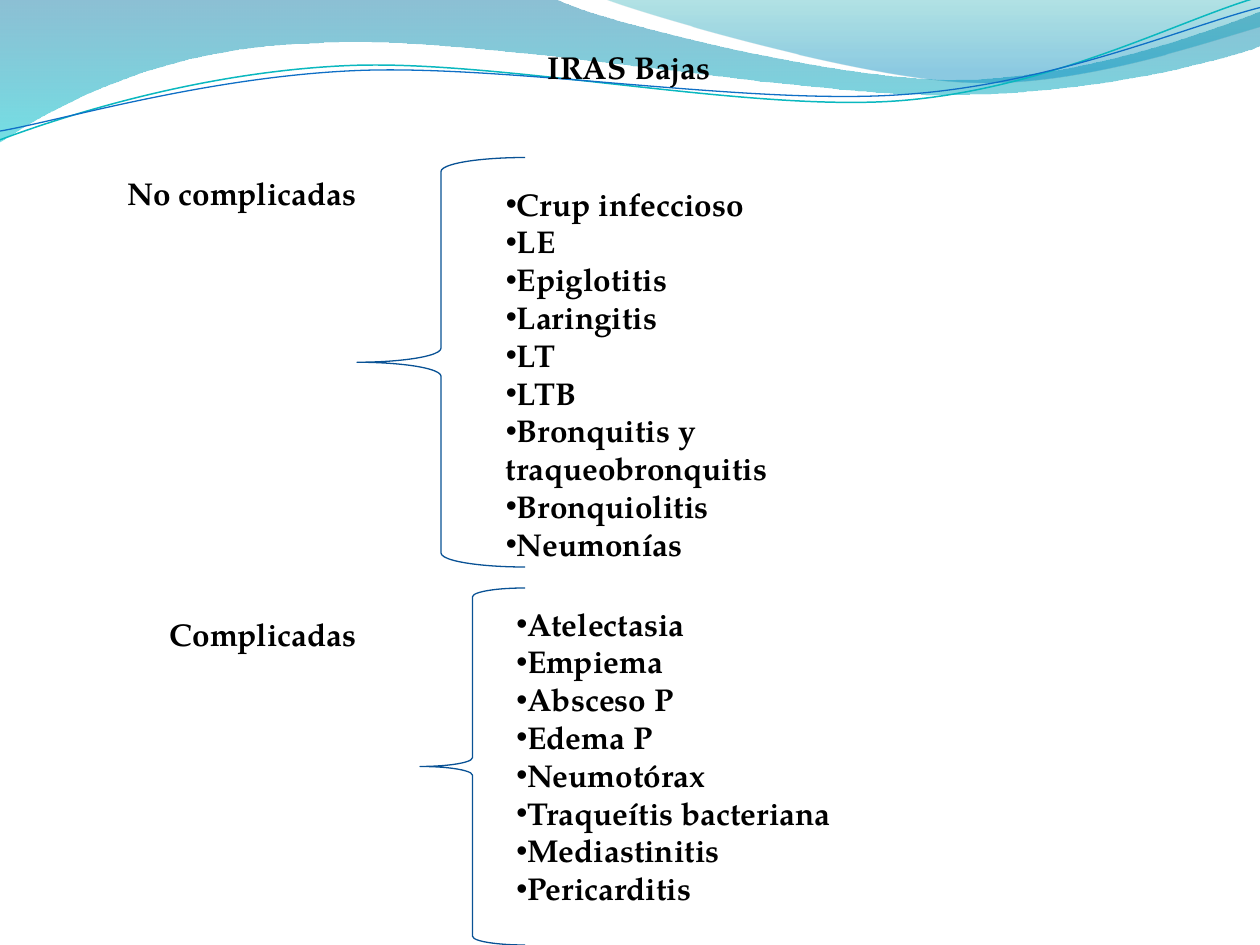
from dataclasses import dataclass
from math import cos, radians, sin

from pptx import Presentation
from pptx.dml.color import RGBColor
from pptx.enum.shapes import MSO_SHAPE
from pptx.oxml import parse_xml
from pptx.oxml.ns import nsdecls, qn
from pptx.util import Inches, Pt


@dataclass(frozen=True)
class Theme:
    font: str = "TeX Gyre Pagella"
    text_size: float = 18
    text: str = "000000"
    brace: str = "095295"
    brace_width: float = 0.75
    teal_line: str = "0AB8BF"
    blue_line: str = "0F6FC6"
    wide_wave: tuple = ((0, "0074A1", 45), (1, "00C6CF", 55))
    corner_wave: tuple = ((0, "00A1A9", 30), (0.8, "008BBF", 45))


class SlideBuilder:
    COLUMNS = 120
    ROWS = 90
    TILT = 2.7

    def __init__(self, presentation, theme):
        self.theme = theme
        self.slide = presentation.slides.add_slide(presentation.slide_layouts[6])
        self.column = presentation.slide_width / self.COLUMNS
        self.row = presentation.slide_height / self.ROWS
        self.percent = presentation.slide_width / 100

    def box(self, left, top, width, height):
        return (round(left * self.column), round(top * self.row),
                round(width * self.column), round(height * self.row))

    def text(self, lines, *place, bullets=False):
        frame = self.slide.shapes.add_textbox(*self.box(*place)).text_frame
        frame.word_wrap = True
        for index, line in enumerate(lines):
            paragraph = frame.add_paragraph() if index else frame.paragraphs[0]
            run = paragraph.add_run()
            run.text = line
            run.font.name = self.theme.font
            run.font.size = Pt(self.theme.text_size)
            run.font.bold = True
            run.font.color.rgb = RGBColor.from_string(self.theme.text)
            if bullets:
                properties = paragraph._p.get_or_add_pPr()
                properties.append(parse_xml(f'<a:buFont {nsdecls("a")} typeface="Arial"/>'))
                properties.append(parse_xml(f'<a:buChar {nsdecls("a")} char="•"/>'))

    def brace(self, *place):
        shape = self.slide.shapes.add_shape(MSO_SHAPE.LEFT_BRACE, *self.box(*place))
        shape.shadow.inherit = False
        shape.fill.background()
        self.outline(shape, self.theme.brace, self.theme.brace_width)

    def outline(self, shape, color, width):
        shape.line.color.rgb = RGBColor.from_string(color)
        shape.line.width = Pt(width)

    def level(self, point, center):
        x, y = point[0] - center[0], point[1] - center[1]
        angle = radians(self.TILT)
        return (center[0] + x * cos(angle) - y * sin(angle),
                center[1] + x * sin(angle) + y * cos(angle))

    def curve(self, start, segments, close, center=None):
        points = [start]
        for segment in segments:
            points.extend(zip(segment[::2], segment[1::2]))
        if center:
            points = [self.level(point, center) for point in points]
        points = [(x * self.percent, y * self.percent) for x, y in points]
        builder = self.slide.shapes.build_freeform(*points[0], scale=1.0)
        builder.add_line_segments(points[1:], close=close)
        shape = builder.convert_to_shape()
        shape.shadow.inherit = False
        steps = iter(list(shape._element.spPr.iter(qn("a:lnTo"))))
        for segment in segments:
            first = next(steps)
            if len(segment) == 6:
                bezier = parse_xml(f'<a:cubicBezTo {nsdecls("a")}/>')
                first.addprevious(bezier)
                for step in (first, next(steps), next(steps)):
                    bezier.append(step[0])
                    step.getparent().remove(step)
        return shape

    def wave(self, stops, start, *segments):
        shape = self.curve(start, segments, close=True)
        shape.line.fill.background()
        shape.fill.gradient()
        shape.fill.gradient_angle = 270
        for stop, (position, color, _) in zip(shape.fill.gradient_stops, stops):
            stop.position = position
            stop.color.rgb = RGBColor.from_string(color)
        colors = shape._element.spPr.iter(qn("a:srgbClr"))
        for color, (_, _, opacity) in zip(colors, stops):
            color.append(parse_xml(f'<a:alpha {nsdecls("a")} val="{opacity * 1000}"/>'))

    def wave_line(self, color, width, center, start, *segments):
        shape = self.curve(start, segments, close=False, center=center)
        shape.rotation = 360 - self.TILT
        shape.fill.background()
        self.outline(shape, color, width)


def main():
    presentation = Presentation()
    presentation.slide_width = Inches(10)
    presentation.slide_height = Inches(7.5)
    theme = Theme()
    slide = SlideBuilder(presentation, theme)

    slide.wave(theme.wide_wave, (0, 0), (44, -0.1),
               (47.6, 1.7, 66.4, 6.3, 75.8, 6.3), (85.3, 6.3, 95.8, 2.6, 100, 0.9),
               (100.1, 3.6), (98.3, 4.4, 87, 7.6, 74.6, 7.5),
               (62.2, 7.5, 38.2, 2.8, 25.7, 3.4), (12.9, 3.6, 4.6, 8.3, -0.1, 11.3),
               (0, 0))
    slide.wave(theme.corner_wave, (47.9, -0.1),
               (50.9, 1.1, 68.2, 6.2, 76.9, 6.5), (85.6, 6.9, 96.1, 3.2, 100, 2.1),
               (100, 0), (47.9, -0.1))
    slide.wave_line(theme.teal_line, 0.85, (49.9, 5.75), (0, 11.1),
                    (4.8, 9.3, 15.8, 5.7, 27.7, 5.2), (39.5, 4.7, 59.3, 8.9, 71.3, 8),
                    (83.3, 7.1, 93.8, 1.5, 99.8, -0.2))
    slide.wave_line(theme.blue_line, 0.75, (49.95, 5.9), (0, 10.4),
                    (4.7, 9.6, 16.4, 6.1, 28.3, 5.6), (40.3, 5.1, 59.7, 8.4, 71.7, 7.5),
                    (83.6, 6.7, 94.1, 2.1, 100, 0.6))

    slide.text(["No complicadas"], 11, 16, 27, 4.8)
    slide.brace(34, 15, 16, 39)
    slide.text(["IRAS Bajas"], 51, 4, 27, 4.8)
    slide.text(["Crup infeccioso", "LE", "Epiglotitis", "Laringitis", "LT", "LTB",
                "Bronquitis y traqueobronquitis", "Bronquiolitis", "Neumonías"],
               47, 17, 44, 44.9, bullets=True)
    slide.text(["Complicadas"], 15, 58, 23, 4.8)
    slide.brace(40, 56, 10, 34)
    slide.text(["Atelectasia", "Empiema", "Absceso P", "Edema P", "Neumotórax",
                "Traqueítis bacteriana", "Mediastinitis", "Pericarditis"],
               48, 57, 34, 30.2, bullets=True)

    presentation.save("out.pptx")


if __name__ == "__main__":
    main()
